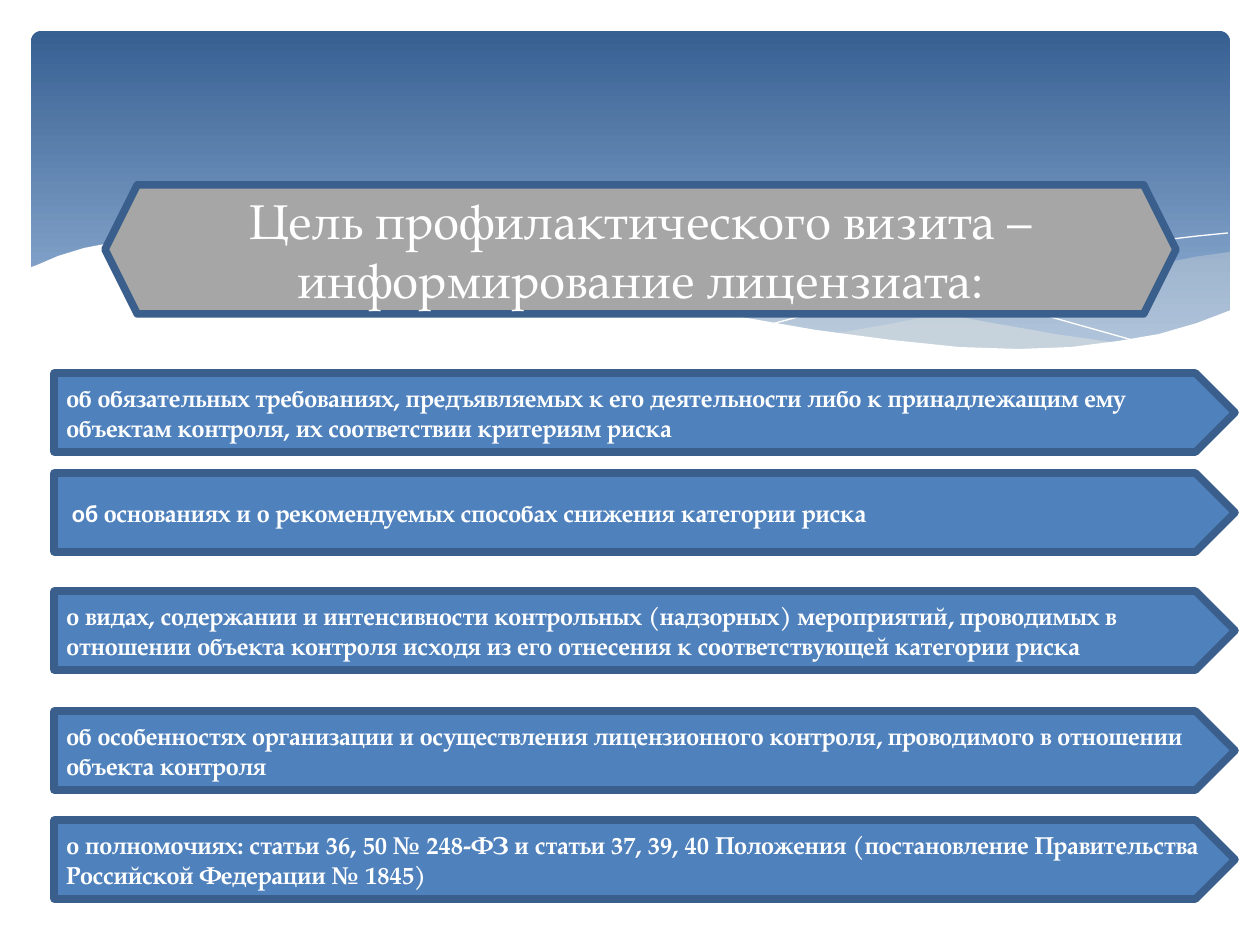
from lxml import etree
from pptx import Presentation
from pptx.dml.color import RGBColor
from pptx.enum.shapes import MSO_SHAPE
from pptx.enum.text import MSO_ANCHOR, MSO_AUTO_SIZE, PP_ALIGN
from pptx.oxml.ns import qn
from pptx.util import Pt

EMU_PER_PX = 914400 / 126
ROUND_RECT = MSO_SHAPE.ROUNDED_RECTANGLE
HEXAGON = MSO_SHAPE.HEXAGON
PENTAGON = MSO_SHAPE.PENTAGON
MIDDLE = MSO_ANCHOR.MIDDLE
NO_FIT = MSO_AUTO_SIZE.NONE
LEFT, CENTER = PP_ALIGN.LEFT, PP_ALIGN.CENTER

SERIF, SANS = "TeX Gyre Pagella", "Calibri"
COLORS = {
    "white": "FFFFFF",
    "sky_top": "376092",
    "sky_bottom": "95B3D7",
    "sheet": "EEECE1",
    "bar": "4F81BD",
    "outline": "3A5F8C",
    "title_fill": "A6A6A6",
}

RIGHT_SHEET = [
    (1230, 252), (1194, 257), (1142, 268), (1085, 281), (1014, 299), (949, 312),
    (890, 324), (833, 334), (871, 339), (922, 345), (969, 349), (1026, 350),
    (1076, 348), (1120, 343), (1160, 334), (1196, 324), (1230, 311),
]
MIDDLE_SHEET = [
    (1125, 344), (1055, 334), (976, 320), (890, 302), (793, 280), (736, 266),
    (682, 256), (616, 244), (557, 238), (503, 234), (455, 233), (413, 236),
    (360, 241), (407, 247), (456, 256), (509, 266), (566, 280), (668, 302),
    (757, 321), (838, 335), (910, 345), (974, 349), (1031, 350), (1080, 349),
]
FALLING_CURVE = [
    (389, 246), (433, 239), (488, 236), (546, 236), (616, 239), (672, 244),
    (733, 252), (801, 262), (876, 276), (958, 294), (1047, 316), (1143, 343),
]
RISING_CURVE = [
    (772, 324), (847, 304), (942, 281), (1016, 265), (1091, 251), (1147, 242),
    (1198, 236), (1228, 233),
]
WHITE_WAVE = [
    (1231, 310), (1197, 323), (1159, 334), (1118, 341), (1071, 347), (1019, 349),
    (959, 347), (892, 340), (816, 330), (730, 315), (634, 294), (563, 277),
    (493, 261), (428, 248), (368, 239), (315, 234), (266, 232), (223, 232),
    (184, 233), (150, 236), (120, 241), (84, 248), (58, 256), (37, 265),
    (29, 268), (29, 415), (1231, 415),
]

TITLE = "Цель профилактического визита – информирование лицензиата:"
TITLE_BOX = (105, 185, 1071, 129)
BAR_LEFT, BAR_WIDTH, BAR_HEIGHT = 54, 1181, 79
BARS = [
    (373, [("об обязательных требованиях, предъявляемых к его деятельности либо "
            "к принадлежащим ему объектам контроля, их соответствии критериям риска", SERIF)]),
    (473, [(" об ", SANS),
           ("основаниях и о рекомендуемых способах снижения категории риска", SERIF)]),
    (591, [("о видах, содержании и интенсивности контрольных (надзорных) мероприятий, "
            "проводимых в отношении объекта контроля исходя из его отнесения "
            "к соответствующей категории риска", SERIF)]),
    (711, [("об особенностях организации и осуществления лицензионного контроля, "
            "проводимого в отношении объекта контроля", SERIF)]),
    (820, [("о полномочиях: статьи 36, 50 № 248-ФЗ и статьи 37, 39, 40 Положения "
            "(постановление Правительства Российской Федерации № 1845)", SERIF)]),
]


def px(*lengths):
    return [round(length * EMU_PER_PX) for length in lengths]


def color(name):
    return RGBColor.from_string(COLORS[name])


class SlideBuilder:
    def __init__(self, slide):
        self.slide = slide
        self.shapes = slide.shapes

    def add_text(self, shape, spans, size, align, bold=False):
        frame = shape.text_frame
        frame.word_wrap = True
        frame.auto_size = NO_FIT
        frame.vertical_anchor = MIDDLE
        para = frame.paragraphs[0]
        para.alignment = align
        for text, font in spans:
            span = para.add_run()
            span.text = text
            span.font.name = font
            span.font.size = Pt(size)
            span.font.bold = bold
            span.font.color.rgb = color("white")

    def sky(self, box):
        shape = self.shapes.add_shape(ROUND_RECT, *px(*box))
        shape.shadow.inherit = False
        shape.adjustments[0] = 0.03
        shape.line.fill.background()
        shape.fill.gradient()
        shape.fill.gradient_angle = 270
        stops = [("sky_top", 0), ("sky_bottom", 0.9)]
        for stop, (name, position) in zip(shape.fill.gradient_stops, stops):
            stop.color.rgb = color(name)
            stop.position = position

    def outline(self, points, closed):
        builder = self.shapes.build_freeform(*points[0], scale=EMU_PER_PX)
        builder.add_line_segments(points[1:], close=closed)
        shape = builder.convert_to_shape()
        shape.shadow.inherit = False
        return shape

    def area(self, points, fill, opacity=100):
        shape = self.outline(points, True)
        shape.line.fill.background()
        shape.fill.solid()
        shape.fill.fore_color.rgb = color(fill)
        if opacity < 100:
            tint = shape.element.spPr.find(qn("a:solidFill"))[0]
            etree.SubElement(tint, qn("a:alpha"), val=str(opacity * 1000))

    def curve(self, points):
        shape = self.outline(points, False)
        shape.fill.background()
        shape.line.color.rgb = color("white")
        shape.line.width = Pt(0)

    def framed(self, kind, box, fill):
        """Add a preset shape with the thick, round-joined outline."""
        shape = self.shapes.add_shape(kind, *px(*box))
        shape.shadow.inherit = False
        shape.fill.solid()
        shape.fill.fore_color.rgb = color(fill)
        shape.line.color.rgb = color("outline")
        shape.line.width = Pt(4.33)
        etree.SubElement(shape.element.spPr.find(qn("a:ln")), qn("a:round"))
        return shape

    def title(self, text, box):
        self.framed(HEXAGON, box, "title_fill")
        title = self.shapes.title
        title.left, title.top, title.width, title.height = px(*box)
        self.add_text(title, [(text, SERIF)], 28, CENTER)
        title.element.getparent().append(title.element)  # in front of the hexagon

    def bar(self, top, spans):
        box = (BAR_LEFT, top, BAR_WIDTH, BAR_HEIGHT)
        self.add_text(self.framed(PENTAGON, box, "bar"), spans, 14, LEFT, bold=True)


def main():
    deck = Presentation()
    deck.slide_width, deck.slide_height = px(1260, 945)
    page = SlideBuilder(deck.slides.add_slide(deck.slide_layouts[5]))
    page.sky((31, 31, 1199, 340))
    page.area(RIGHT_SHEET, "sheet", 29)
    page.area(MIDDLE_SHEET, "sheet", 40)
    page.curve(FALLING_CURVE)
    page.curve(RISING_CURVE)
    page.area(WHITE_WAVE, "white")
    for top, spans in BARS:
        page.bar(top, spans)
    page.title(TITLE, TITLE_BOX)
    deck.save("out.pptx")


if __name__ == "__main__":
    main()
